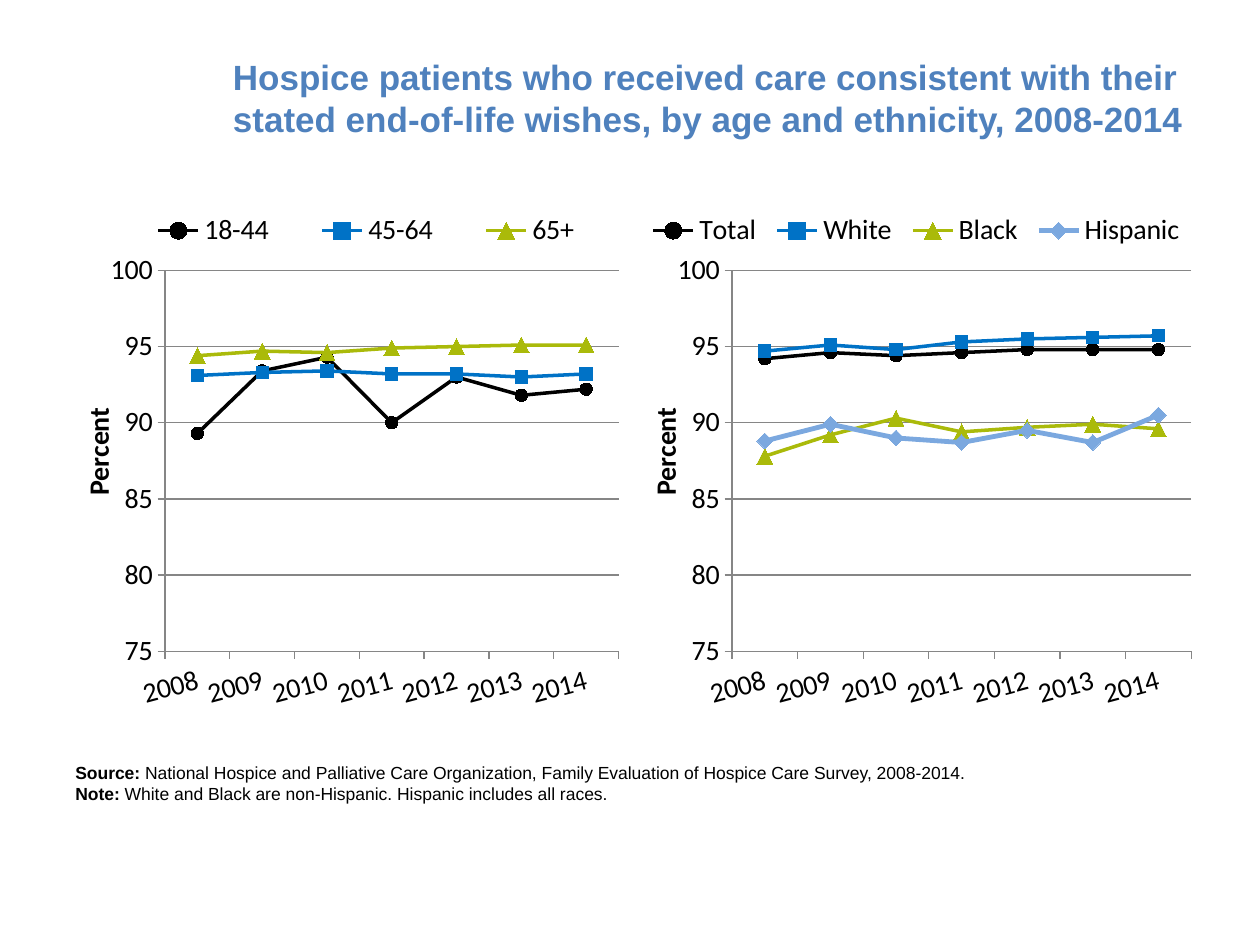
import pptx
import pptx.chart.data
import pptx.dml.color
import pptx.enum.chart
import pptx.enum.text
import pptx.oxml
import pptx.oxml.ns
import pptx.util
from pptx.util import Inches

COLORS = {"title": "4F81BD", "text": "000000", "axis": "868686", "black": "000000",
          "blue": "0072C6", "green": "AABA0A", "sky": "7BA8DF"}
MARKER = pptx.enum.chart.XL_MARKER_STYLE
STYLES = [("black", MARKER.CIRCLE, 7, 2), ("blue", MARKER.SQUARE, 7, 2),
          ("green", MARKER.TRIANGLE, 9, 2), ("sky", MARKER.DIAMOND, 9, 2.75)]
YEARS = [str(year) for year in range(2008, 2015)]
AGES = {"18-44": (89.3, 93.4, 94.3, 90, 93, 91.8, 92.2),
        "45-64": (93.1, 93.3, 93.4, 93.2, 93.2, 93, 93.2),
        "65+": (94.4, 94.7, 94.6, 94.9, 95, 95.1, 95.1)}
ETHNICITIES = {"Total": (94.2, 94.6, 94.4, 94.6, 94.8, 94.8, 94.8),
               "White": (94.7, 95.1, 94.8, 95.3, 95.5, 95.6, 95.7),
               "Black": (87.8, 89.2, 90.3, 89.4, 89.7, 89.9, 89.6),
               "Hispanic": (88.8, 89.9, 89, 88.7, 89.5, 88.7, 90.5)}
NOTES = [("Source: ", "National Hospice and Palliative Care Organization, "
          "Family Evaluation of Hospice Care Survey, 2008-2014."),
         ("Note: ", "White and Black are non-Hispanic. Hispanic includes all races.")]


def rgb(name):
    """Return the named colour."""
    return pptx.dml.color.RGBColor.from_string(COLORS[name])


def style_font(font, face, size, color="text", bold=False):
    """Set face, size, colour and weight of a font."""
    font.name, font.size, font.bold = face, pptx.util.Pt(size), bold
    font.color.rgb = rgb(color)


def style_line(line, color, width):
    """Set colour and width of a line."""
    line.color.rgb, line.width = rgb(color), pptx.util.Pt(width)


def add_text(slide, box, paragraphs, size, color, anchor):
    """Place a wrapped text box of (text, bold) runs."""
    frame = slide.shapes.add_textbox(*map(Inches, box)).text_frame
    frame.word_wrap, frame.vertical_anchor = True, anchor
    for index, runs in enumerate(paragraphs):
        paragraph = frame.add_paragraph() if index else frame.paragraphs[0]
        for text, bold in runs:
            run = paragraph.add_run()
            run.text = text
            style_font(run.font, "Arial", size, color, bold)


def add_title(slide, box):
    """Place the slide title."""
    title = ("Hospice patients who received care consistent with their "
             "stated end-of-life wishes, by age and ethnicity, 2008-2014")
    add_text(slide, box, [[(title, True)]], 20, "title", pptx.enum.text.MSO_ANCHOR.MIDDLE)


def add_notes(slide, box):
    """Place the source and note lines."""
    lines = [[(label, True), (text, False)] for label, text in NOTES]
    add_text(slide, box, lines, 10, "text", pptx.enum.text.MSO_ANCHOR.TOP)


def set_layout(part, index, position, inner=False):
    """Give a chart part a manual layout in fractions of the chart."""
    for old in part.findall(pptx.oxml.ns.qn("c:layout")):
        part.remove(old)
    modes = '<c:layoutTarget val="inner"/>' if inner else ""
    modes += '<c:xMode val="edge"/><c:yMode val="edge"/>'
    values = "".join(f'<c:{key} val="{value}"/>' for key, value in zip("xywh", position))
    part.insert(index, pptx.oxml.parse_xml(
        f'<c:layout {pptx.oxml.ns.nsdecls("c")}><c:manualLayout>{modes}{values}'
        "</c:manualLayout></c:layout>"))


def style_axes(chart):
    """Format the year axis and the percent axis."""
    years, percent = chart.category_axis, chart.value_axis
    for axis in (years, percent):
        axis.major_tick_mark = pptx.enum.chart.XL_TICK_MARK.OUTSIDE
        axis.minor_tick_mark = pptx.enum.chart.XL_TICK_MARK.NONE
        style_line(axis.format.line, "axis", 0.75)
        style_font(axis.tick_labels.font, "Calibri", 16)
    percent.minimum_scale, percent.maximum_scale, percent.major_unit = 75, 100, 5
    percent.has_major_gridlines = True
    style_line(percent.major_gridlines.format.line, "axis", 0.75)
    percent.tick_labels.number_format = "0"
    percent.tick_labels.number_format_is_linked = False
    run = percent.axis_title.text_frame.paragraphs[0].add_run()
    run.text = "Percent"
    style_font(run.font, "Calibri", 16, bold=True)


def add_line_chart(slide, box, groups, plot, legend):
    """Place a line chart of one patient grouping."""
    data = pptx.chart.data.CategoryChartData(number_format="0.0")
    data.categories = YEARS
    for name, values in groups.items():
        data.add_series(name, values)
    kind = pptx.enum.chart.XL_CHART_TYPE.LINE_MARKERS
    chart = slide.shapes.add_chart(kind, *map(Inches, box), data).chart
    chart.has_title = False
    style_font(chart.font, "Arial", 10)
    style_axes(chart)
    chart.has_legend = True
    chart.legend.position = pptx.enum.chart.XL_LEGEND_POSITION.TOP
    chart.legend.include_in_layout = False
    style_font(chart.legend.font, "Calibri", 16)
    chart.plots[0].vary_by_categories = False
    for series, (color, shape, size, width) in zip(chart.plots[0].series, STYLES):
        series.smooth = False
        style_line(series.format.line, color, width)
        series.marker.style, series.marker.size = shape, size
        series.marker.format.fill.solid()
        series.marker.format.fill.fore_color.rgb = rgb(color)
        series.marker.format.line.color.rgb = rgb(color)
    names = pptx.oxml.ns.namespaces("c", "a")
    root = chart.element
    root.find(".//c:catAx/c:txPr/a:bodyPr", names).set("rot", "-900000")
    set_layout(root.find(".//c:plotArea", names), 0, plot, inner=True)
    set_layout(root.find(".//c:legend", names), 1, legend)
    set_layout(root.find(".//c:valAx/c:title", names), 1, (0.02, 0.38))


def main():
    """Build and save the slide."""
    deck = pptx.Presentation()
    deck.slide_width, deck.slide_height = Inches(10), Inches(7.5)
    slide = deck.slides.add_slide(deck.slide_layouts[6])
    add_title(slide, (1.75, 0.3, 7.75, 0.95))
    add_line_chart(slide, (0.5, 1.6, 4.5, 4.2), AGES,
                   (0.18, 0.13, 0.8, 0.72), (0.09, 0.01, 0.89, 0.09))
    add_notes(slide, (0.5, 6, 9, 0.44))
    add_line_chart(slide, (5, 1.6, 4.5, 4.2), ETHNICITIES,
                   (0.18, 0.13, 0.81, 0.72), (0.02, 0.01, 0.97, 0.09))
    deck.save("out.pptx")


if __name__ == "__main__":
    main()
